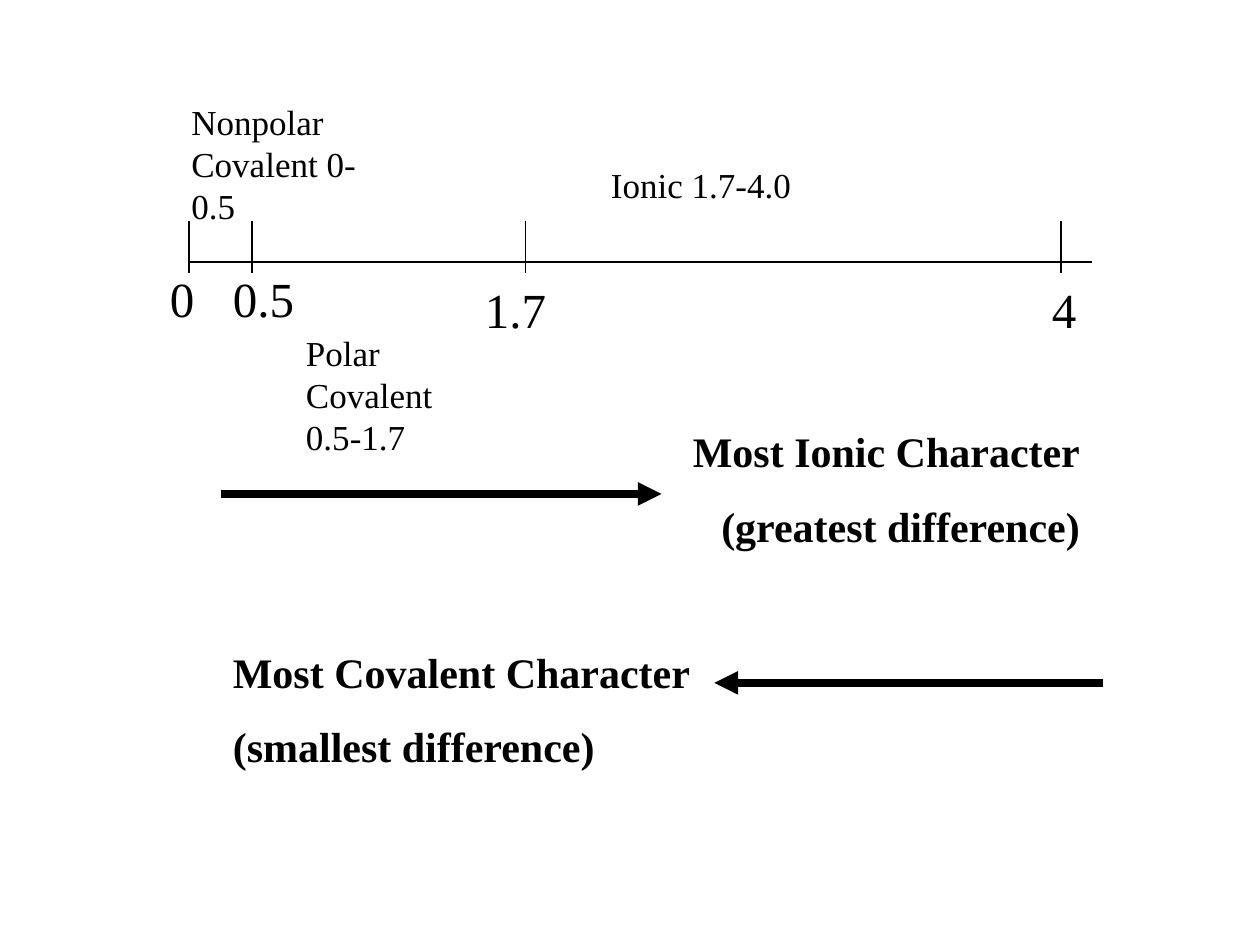
import pptx
import pptx.dml.color
import pptx.enum.shapes
import pptx.enum.text
import pptx.oxml
import pptx.oxml.ns
import pptx.util
from pptx.util import Inches

COLORS = {"ink": "000000", "background": "FFFFFF"}
FONT = "Times New Roman"
ALIGN = pptx.enum.text.PP_ALIGN


def rgb(name):
    return pptx.dml.color.RGBColor.from_string(COLORS[name])


class SlideBuilder:
    """Holds the style and the slide being drawn."""

    def __init__(self, slide):
        self.slide = slide
        slide.background.fill.solid()
        slide.background.fill.fore_color.rgb = rgb("background")

    def line(self, x1, y1, x2, y2, width=0.75, arrow=False):
        connector = self.slide.shapes.add_connector(
            pptx.enum.shapes.MSO_CONNECTOR.STRAIGHT,
            Inches(x1), Inches(y1), Inches(x2), Inches(y2))
        connector.line.color.rgb = rgb("ink")
        connector.line.width = pptx.util.Pt(width)
        properties = connector._element.spPr
        if arrow:
            tail = pptx.oxml.parse_xml(
                f'<a:tailEnd {pptx.oxml.ns.nsdecls("a")} type="triangle"/>')
            connector.line._get_or_add_ln().append(tail)
        properties.append(pptx.oxml.parse_xml(
            f'<a:effectLst {pptx.oxml.ns.nsdecls("a")}/>'))

    def text(self, content, left, top, width, height, size,
             bold=False, align=ALIGN.LEFT):
        """Add a text box; paragraphs after the first get half a line before."""
        box = self.slide.shapes.add_textbox(
            Inches(left), Inches(top), Inches(width), Inches(height))
        frame = box.text_frame
        frame.word_wrap = True
        frame.text = content
        for index, paragraph in enumerate(frame.paragraphs):
            paragraph.alignment = align
            if index:
                paragraph.space_before = pptx.util.Pt(size * 0.575)
            for run in paragraph.runs:
                run.font.name = FONT
                run.font.size = pptx.util.Pt(size)
                run.font.bold = bold
                run.font.color.rgb = rgb("ink")


def main():
    presentation = pptx.Presentation()
    presentation.slide_width = Inches(10)
    presentation.slide_height = Inches(7.5)
    blank_layout = presentation.slide_layouts[6]
    builder = SlideBuilder(presentation.slides.add_slide(blank_layout))

    # Electronegativity scale: tick position, then label box
    builder.line(1.5, 2.08, 8.67, 2.08)
    ticks = [
        ("0", 1.5, 1.25, 2.08, 0.75),
        ("0.5", 2, 1.75, 2.08, 0.75),
        ("1.7", 4.17, 3.75, 2.17, 0.75),
        ("4", 8.42, 8.25, 2.17, 0.5),
    ]
    for label, tick_x, left, top, width in ticks:
        builder.line(tick_x, 1.75, tick_x, 2.17)
        builder.text(label, left, top, width, 0.57, 28)

    bond_ranges = [
        ("Nonpolar Covalent 0-0.5", 1.42, 0.75, 1.58, 1.1),
        ("Polar Covalent 0.5-1.7", 2.33, 2.58, 1.58, 1.1),
        ("Ionic 1.7-4.0", 4.75, 1.25, 2.92, 0.43),
    ]
    for label, left, top, width, height in bond_ranges:
        builder.text(label, left, top, width, height, 20)

    builder.text("Most Ionic Character\n(greatest difference)",
                 1.5, 3.33, 7.17, 1.7, 24, bold=True, align=ALIGN.RIGHT)
    builder.text("Most Covalent Character\n(smallest difference)",
                 1.75, 5.08, 7.17, 1.1, 24, bold=True)
    builder.line(1.75, 3.92, 5.25, 3.92, width=4.5, arrow=True)
    builder.line(8.75, 5.42, 5.67, 5.42, width=4.5, arrow=True)

    presentation.save("out.pptx")


if __name__ == "__main__":
    main()
